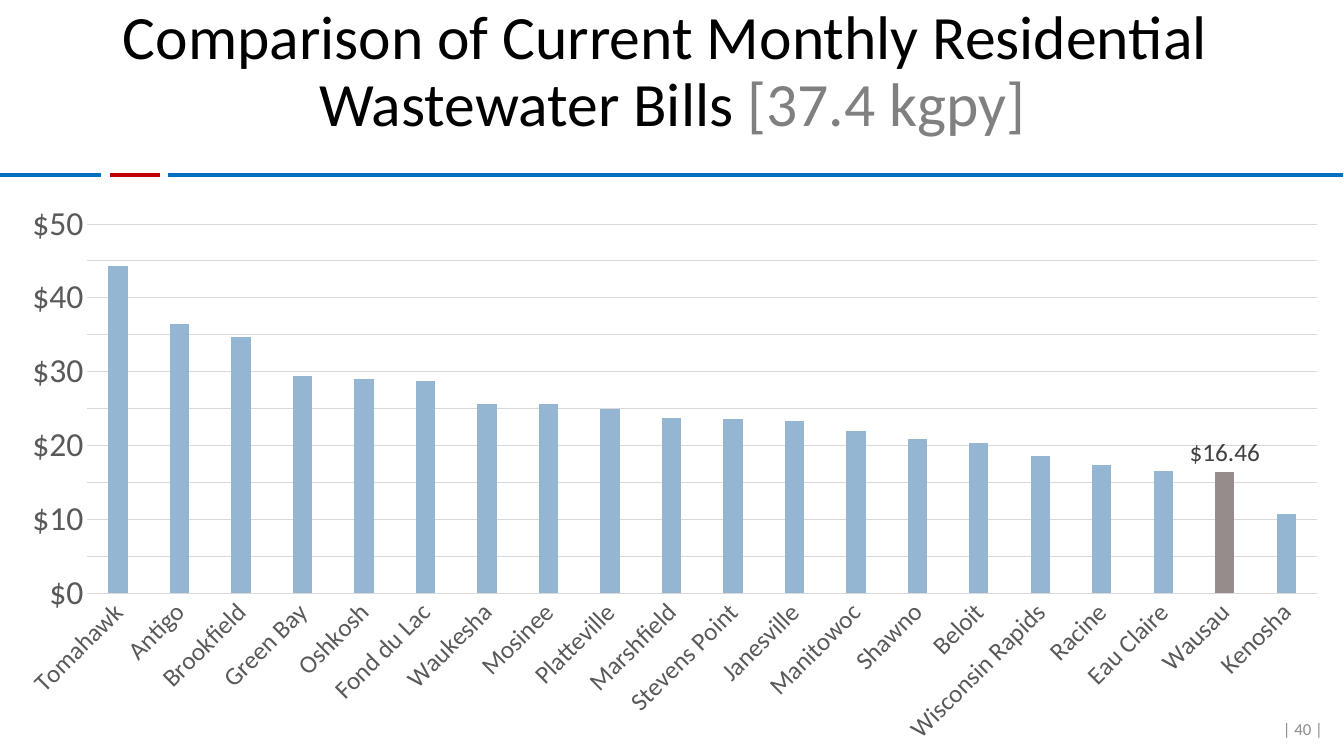
from copy import deepcopy
from lxml.etree import SubElement
from pptx import Presentation
from pptx.chart.data import CategoryChartData
from pptx.dml.color import RGBColor
from pptx.enum.chart import XL_CHART_TYPE, XL_LABEL_POSITION, XL_TICK_MARK
from pptx.enum.shapes import MSO_CONNECTOR
from pptx.enum.text import MSO_ANCHOR, PP_ALIGN
from pptx.oxml import parse_xml
from pptx.oxml.ns import nsdecls, qn
from pptx.util import Inches, Pt

BILLS = {
    "Tomahawk": 44.26, "Antigo": 36.52, "Brookfield": 34.68, "Green Bay": 29.4,
    "Oshkosh": 29.06, "Fond du Lac": 28.79, "Waukesha": 25.59, "Mosinee": 25.56,
    "Platteville": 24.94, "Marshfield": 23.76, "Stevens Point": 23.63,
    "Janesville": 23.28, "Manitowoc": 21.93, "Shawno": 20.93, "Beloit": 20.3,
    "Wisconsin Rapids": 18.6, "Racine": 17.33, "Eau Claire": 16.48,
    "Wausau": 16.46, "Kenosha": 10.77,
}


def color(code):
    return RGBColor.from_string(code)


class Deck:
    face = "Calibri"
    grid = "D9D9D9"
    label = "595959"

    def __init__(self):
        self.prs = Presentation()
        self.prs.slide_width = Inches(13.33)
        self.prs.slide_height = Inches(7.5)
        self.slide = self.prs.slides.add_slide(self.prs.slide_layouts[6])

    def style(self, font, size, code):
        font.name = self.face
        font.size = Pt(size)
        font.color.rgb = color(code)

    def stroke(self, line, code, width=0.75):
        line.color.rgb = color(code)
        line.width = Pt(width)

    def rule(self, start, end, code, y=1.74):
        line = self.slide.shapes.add_connector(
            MSO_CONNECTOR.STRAIGHT, Inches(start), Inches(y), Inches(end), Inches(y))
        self.stroke(line.line, code, 3)
        SubElement(line._element.spPr, qn("a:effectLst"))

    def text(self, *runs, box, size, align, space=1.0):
        frame = self.slide.shapes.add_textbox(*map(Inches, box)).text_frame
        frame.word_wrap = True
        frame.vertical_anchor = MSO_ANCHOR.MIDDLE
        para = frame.paragraphs[0]
        para.alignment = align
        para.line_spacing = space
        for words, code in runs:
            for count, part in enumerate(words.split("\n")):
                if count:
                    para.add_line_break()
                run = para.add_run()
                run.text = part
                self.style(run.font, size, code)

    def axis(self, axis, size):
        axis.major_tick_mark = axis.minor_tick_mark = XL_TICK_MARK.NONE
        self.style(axis.tick_labels.font, size, self.label)

    def columns(self, bills, box, chosen):
        data = CategoryChartData(number_format='"$"#,##0.00')
        data.categories = list(bills)
        data.add_series("Series 1", list(bills.values()))
        chart = self.slide.shapes.add_chart(
            XL_CHART_TYPE.COLUMN_CLUSTERED, *map(Inches, box), data).chart
        chart.has_title = chart.has_legend = False
        self.style(chart.font, 18, "000000")

        names, money = chart.category_axis, chart.value_axis
        self.axis(names, 18)
        self.stroke(names.format.line, self.grid)
        names._element.find(qn("c:txPr")).find(qn("a:bodyPr")).set("rot", "-2700000")

        self.axis(money, 24)
        money.format.line.fill.background()
        money.minimum_scale, money.maximum_scale = 0, 50
        money.major_unit, money.minor_unit = 10, 5
        money.has_major_gridlines = money.has_minor_gridlines = True
        self.stroke(money.major_gridlines.format.line, self.grid)
        major, minor = (money._element.find(qn(f"c:{kind}Gridlines"))
                        for kind in ("major", "minor"))
        minor.append(deepcopy(major.find(qn("c:spPr"))))
        money.tick_labels.number_format = '"$"#,##0'
        money.tick_labels.number_format_is_linked = False

        plot = chart.plots[0]
        plot.gap_width, plot.overlap = 219, -27
        plot.vary_by_categories = False
        bars = plot.series[0]
        bars.invert_if_negative = False
        bars.format.fill.solid()
        bars.format.fill.fore_color.rgb = color("94B6D2")
        point = bars.points[list(bills).index(chosen)]
        point.format.fill.solid()
        point.format.fill.fore_color.rgb = color("968C8C")
        self.style(point.data_label.font, 18, "404040")
        point.data_label.position = XL_LABEL_POSITION.OUTSIDE_END
        self.place(chart, x=0.065, y=0.056, w=0.915, h=0.655)

    def place(self, chart, **sides):
        area = chart._chartSpace.chart.plotArea
        for old in area.findall(qn("c:layout")):
            area.remove(old)
        spots = "".join(f'<c:{key} val="{val}"/>' for key, val in sides.items())
        area.insert(0, parse_xml(
            f'<c:layout {nsdecls("c")}><c:manualLayout><c:layoutTarget val="inner"/>'
            f'<c:xMode val="edge"/><c:yMode val="edge"/>{spots}'
            '</c:manualLayout></c:layout>'))


def main():
    deck = Deck()
    for start, end, code in ((1.67, 13.32, "0070C0"), (0, 1, "0070C0"),
                             (1.09, 1.59, "C00000")):
        deck.rule(start, end, code)
    deck.text(("Comparison of Current Monthly Residential \nWastewater Bills ", "000000"),
              ("[37.4 kgpy]", "808080"), box=(0.92, 0, 11.5, 1.45), size=44,
              align=PP_ALIGN.CENTER, space=0.9)
    deck.text(("| 40 |", "8C8C8C"), box=(12.42, 7.03, 0.8, 0.4), size=12,
              align=PP_ALIGN.RIGHT)
    deck.columns(BILLS, box=(0, 1.91, 13.33, 5.59), chosen="Wausau")
    deck.prs.save("out.pptx")


if __name__ == "__main__":
    main()
